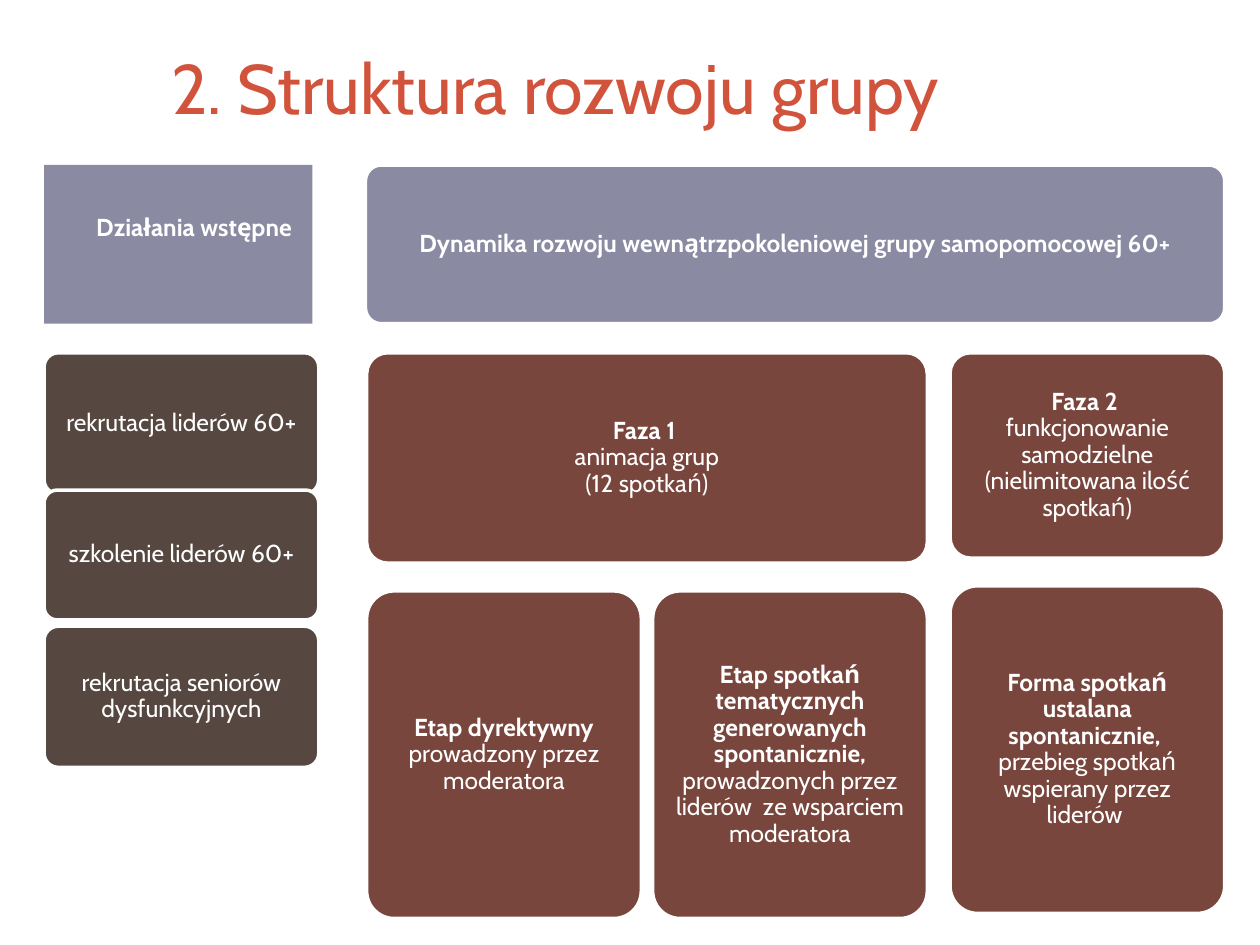
"""Build a slide showing how a 60+ self-help group develops."""
from pptx import Presentation
from pptx.dml.color import RGBColor
from pptx.enum import shapes, text
from pptx.util import Inches, Pt

FONT = "Cabin"
WHITE = RGBColor(0xFF, 0xFF, 0xFF)
RED = RGBColor(0xD2, 0x53, 0x3C)
LAVENDER = RGBColor(0x8A, 0x8A, 0xA3)
BROWN = RGBColor(0x56, 0x48, 0x41)
MAROON = RGBColor(0x79, 0x46, 0x3D)


def add_lines(para, wording, bold):
    for index, line in enumerate(wording.split("\n")):
        if index:
            para.add_line_break()
        if line:
            span = para.add_run()
            span.text = line
            span.font.bold = bold


def add_card(page, kind, bounds, color, heading, detail):
    card = page.shapes.add_shape(kind, *[Inches(value) for value in bounds])
    card.shadow.inherit = False
    card.fill.solid()
    card.fill.fore_color.rgb = color
    frame = card.text_frame
    frame.word_wrap = True
    frame.vertical_anchor = text.MSO_ANCHOR.MIDDLE
    frame.margin_left = frame.margin_right = Inches(0.06)
    frame.margin_top = frame.margin_bottom = Inches(0.06)
    para = frame.paragraphs[0]
    para.alignment = text.PP_ALIGN.CENTER
    para.line_spacing = 0.9
    para.font.name = FONT
    para.font.size = Pt(14)
    para.font.color.rgb = WHITE
    add_lines(para, heading, True)
    add_lines(para, detail, False)
    return card


deck = Presentation()
deck.slide_width, deck.slide_height = Inches(10), Inches(7.5)
page = deck.slides.add_slide(deck.slide_layouts[5])

title = page.shapes.title
title.left, title.top = Inches(1.26), Inches(0.23)
title.width, title.height = Inches(8.52), Inches(0.92)
title.text_frame.text = "2. Struktura rozwoju grupy"
title.text_frame.vertical_anchor = text.MSO_ANCHOR.MIDDLE
title_para = title.text_frame.paragraphs[0]
title_para.alignment = text.PP_ALIGN.LEFT
title_para.font.name = FONT
title_para.font.size = Pt(40)
title_para.font.color.rgb = RED

LEFT, FIRST, SECOND, THIRD = 0.35, 2.91, 5.18, 7.54
WIDTH = 2.18
WIDE = SECOND + WIDTH - FIRST
HEADER_TOP, HEADER_HEIGHT, PHASE_TOP, STAGE_HEIGHT = 1.31, 1.26, 2.8, 2.6

cards = [
    ((LEFT, PHASE_TOP, WIDTH, 1.12), BROWN, "", "rekrutacja liderów 60+"),
    ((LEFT, 3.89, WIDTH, 1.03), BROWN, "", "szkolenie liderów 60+"),
    ((LEFT, 4.97, WIDTH, 1.12), BROWN, "", "rekrutacja seniorów dysfunkcyjnych"),
    ((2.9, HEADER_TOP, 6.82, HEADER_HEIGHT), LAVENDER,
     "Dynamika rozwoju wewnątrzpokoleniowej grupy samopomocowej 60+", ""),
    ((FIRST, PHASE_TOP, WIDE, 1.67), MAROON,
     "Faza 1 \n", "animacja grup\n(12 spotkań)"),
    ((FIRST, 4.69, WIDTH, STAGE_HEIGHT), MAROON,
     "Etap dyrektywny ", "prowadzony przez moderatora"),
    ((SECOND, 4.69, WIDTH, STAGE_HEIGHT), MAROON,
     "Etap spotkań tematycznych generowanych spontanicznie, ",
     "prowadzonych przez liderów  ze wsparciem moderatora"),
    ((THIRD, PHASE_TOP, WIDTH, 1.63), MAROON,
     "Faza 2 \n", "funkcjonowanie samodzielne (nielimitowana ilość spotkań)"),
    ((THIRD, 4.65, WIDTH, STAGE_HEIGHT), MAROON,
     "Forma spotkań ustalana spontanicznie, \n",
     "przebieg spotkań wspierany przez liderów "),
]
for bounds, color, heading, detail in cards:
    card = add_card(page, shapes.MSO_SHAPE.ROUNDED_RECTANGLE,
                    bounds, color, heading, detail)
    card.adjustments[0] = 0.1
    card.line.color.rgb = WHITE
    card.line.width = Pt(2)

intro = add_card(page, shapes.MSO_SHAPE.RECTANGLE,
                 (LEFT, HEADER_TOP, 2.13, HEADER_HEIGHT),
                 LAVENDER, "Działania wstępne", "")
intro.line.fill.background()
intro.text_frame.vertical_anchor = text.MSO_ANCHOR.TOP
intro.text_frame.margin_left = Inches(0.35)
intro.text_frame.margin_right = Inches(0.1)
intro.text_frame.margin_top = Inches(0.37)
intro.text_frame.paragraphs[0].line_spacing = 1.0

deck.save("out.pptx")
